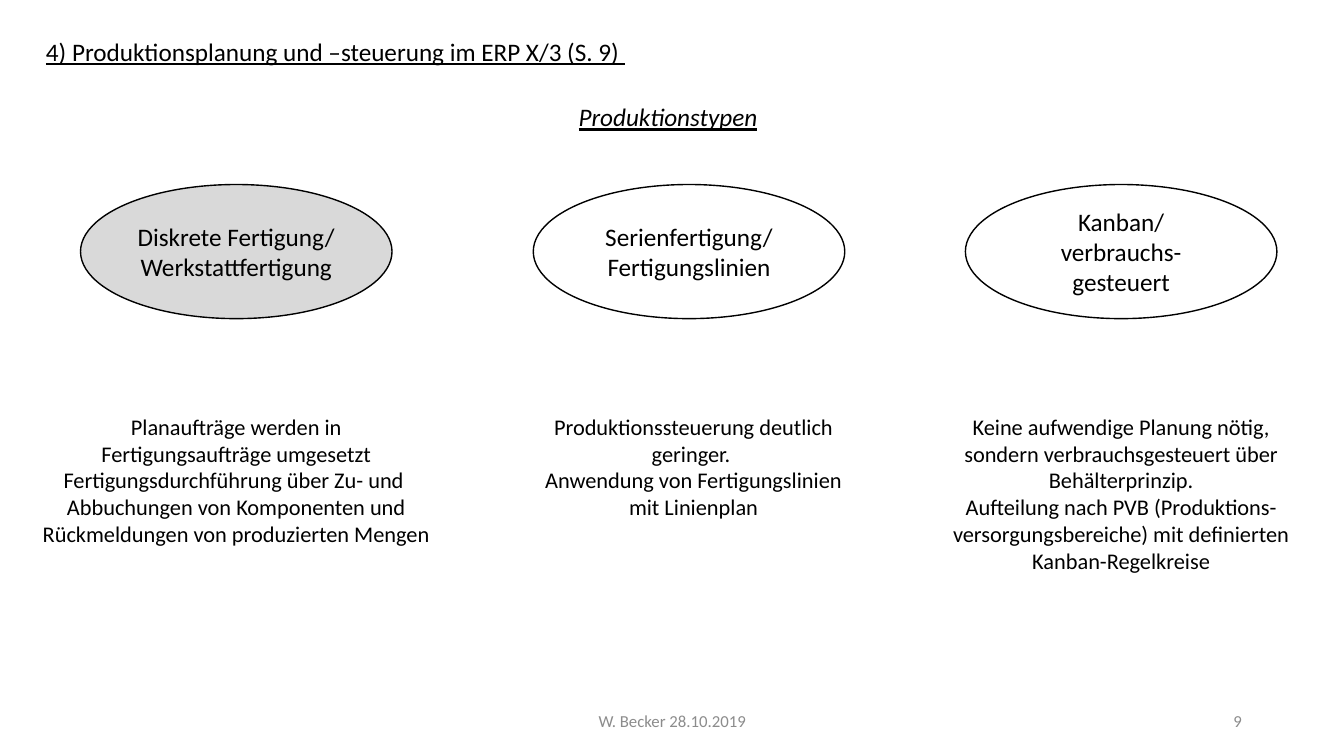
from dataclasses import dataclass

from pptx import Presentation
from pptx.dml.color import RGBColor
from pptx.enum.shapes import MSO_SHAPE
from pptx.enum.text import MSO_ANCHOR as Anchor, MSO_AUTO_SIZE as AutoSize, PP_ALIGN as Align
from pptx.shapes.autoshape import Shape
from pptx.slide import Slide
from pptx.util import Cm, Pt

COLORS = {"text": "000000", "footer": "8C8C8C", "highlight": "D9D9D9"}
FONT = "Calibri"
ELLIPSE_TOP, ELLIPSE_WIDTH, ELLIPSE_HEIGHT = 4.65, 7.85, 3.38
DESCRIPTION_TOP = 10.28
LINE_HEIGHT = 1.02
FOOTER_TOP = 17.65


@dataclass
class ProductionType:
    name: list[str]
    ellipse_left: float
    description: list[str]
    description_left: float
    description_width: float
    description_height: float
    wrap: bool = False
    fill: str | None = None


PRODUCTION_TYPES = [
    ProductionType(
        ["Diskrete Fertigung/", "Werkstattfertigung"], 2.03,
        ["Planaufträge werden in",
         "Fertigungsaufträge umgesetzt",
         "Fertigungsdurchführung über Zu- und ",
         "Abbuchungen von Komponenten und",
         "Rückmeldungen von produzierten Mengen"],
        0.76, 10.39, 3.68, fill="highlight"),
    ProductionType(
        ["Serienfertigung/", "Fertigungslinien"], 13.44,
        ["Produktionssteuerung deutlich",
         "geringer. ",
         "Anwendung von Fertigungslinien",
         "mit Linienplan"],
        13.44, 8.08, 3.0),
    ProductionType(
        ["Kanban/", "verbrauchs-gesteuert"], 24.33,
        ["Keine aufwendige Planung nötig,",
         "sondern verbrauchsgesteuert über Behälterprinzip.",
         "Aufteilung nach PVB (Produktions-versorgungsbereiche) "
         "mit definierten Kanban-Regelkreise"],
        23.39, 9.73, 4.37, wrap=True),
]


def write_text(shape: Shape, lines: list[str], *, size: float = 18, color: str = "text",
               align: Align = Align.CENTER, anchor: Anchor = Anchor.TOP, wrap: bool = True,
               grow: bool = False, italic: bool = False, underline: bool = False) -> None:
    """Fill a shape with one paragraph per line, all in the same format."""
    frame = shape.text_frame
    frame.text = "\n".join(lines)
    frame.word_wrap = wrap
    frame.vertical_anchor = anchor
    frame.auto_size = AutoSize.SHAPE_TO_FIT_TEXT if grow else AutoSize.NONE
    for para in frame.paragraphs:
        para.alignment = align
        for span in para.runs:
            span.font.name = FONT
            span.font.size = Pt(size)
            span.font.italic = italic
            span.font.underline = underline
            span.font.color.rgb = RGBColor.from_string(COLORS[color])


def add_text(page: Slide, lines: list[str], left: float, top: float, width: float,
             height: float = LINE_HEIGHT, **text_format) -> None:
    box = page.shapes.add_textbox(Cm(left), Cm(top), Cm(width), Cm(height))
    write_text(box, lines, **text_format)


def add_ellipse(page: Slide, kind: ProductionType) -> None:
    ellipse = page.shapes.add_shape(MSO_SHAPE.OVAL, Cm(kind.ellipse_left), Cm(ELLIPSE_TOP),
                                    Cm(ELLIPSE_WIDTH), Cm(ELLIPSE_HEIGHT))
    ellipse.shadow.inherit = False
    if kind.fill:
        ellipse.fill.solid()
        ellipse.fill.fore_color.rgb = RGBColor.from_string(COLORS[kind.fill])
    else:
        ellipse.fill.background()
    ellipse.line.color.rgb = RGBColor.from_string(COLORS["text"])
    ellipse.line.width = Pt(1)
    write_text(ellipse, kind.name, anchor=Anchor.MIDDLE)


def main() -> None:
    deck = Presentation()
    deck.slide_width, deck.slide_height = Cm(33.87), Cm(19.05)
    page = deck.slides.add_slide(deck.slide_layouts[6])

    add_text(page, ["4) Produktionsplanung und –steuerung im ERP X/3 (S. 9) "], 0.91, 0.79, 15.27,
             align=Align.LEFT, wrap=False, grow=True, underline=True)
    add_text(page, ["Produktionstypen"], 14.33, 2.44, 5.05,
             align=Align.LEFT, wrap=False, grow=True, italic=True, underline=True)

    for kind in PRODUCTION_TYPES:
        add_ellipse(page, kind)
        add_text(page, kind.description, kind.description_left, DESCRIPTION_TOP,
                 kind.description_width, kind.description_height,
                 size=16, wrap=kind.wrap, grow=True)

    footer_format = {"size": 12, "color": "footer", "anchor": Anchor.MIDDLE}
    add_text(page, ["W. Becker 28.10.2019"], 11.23, FOOTER_TOP, 11.43, **footer_format)
    add_text(page, ["9"], 23.93, FOOTER_TOP, 7.62, align=Align.RIGHT, **footer_format)

    deck.save("out.pptx")


if __name__ == "__main__":
    main()
